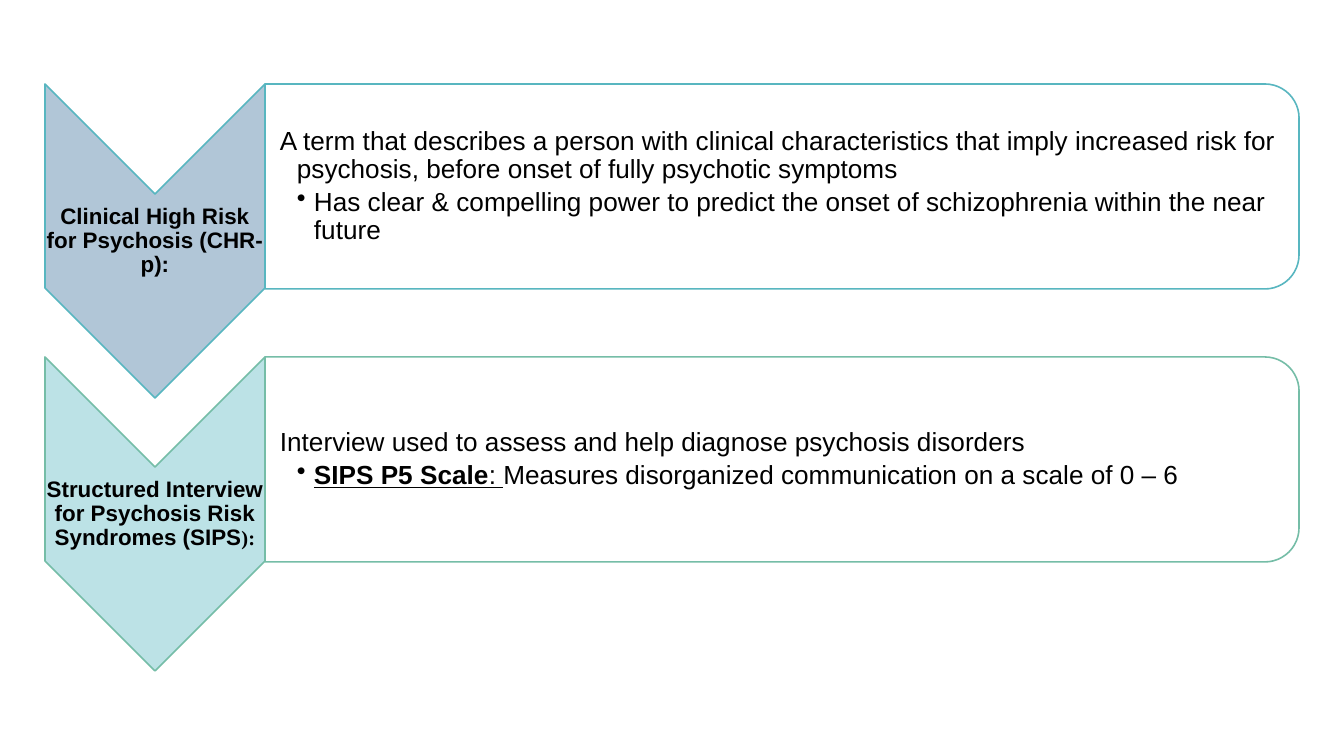
import lxml.etree
import pptx
import pptx.dml.color
import pptx.enum.shapes
import pptx.enum.text
import pptx.oxml.ns
import pptx.util

RGB = pptx.dml.color.RGBColor
SHAPE = pptx.enum.shapes.MSO_SHAPE
ALIGN = pptx.enum.text.PP_ALIGN
qn = pptx.oxml.ns.qn

BLACK = RGB(0x00, 0x00, 0x00)
WHITE = RGB(0xFF, 0xFF, 0xFF)
BLUE_GREY = RGB(0xB1, 0xC6, 0xD7)
PALE_TEAL = RGB(0xBC, 0xE2, 0xE6)
TEAL = RGB(0x58, 0xB6, 0xC0)
GREEN = RGB(0x75, 0xBD, 0xA7)

# Content: each run is its text and the font settings that differ
TERMS = [
    {
        "fill": BLUE_GREY,
        "line": TEAL,
        "label": [("Clinical High Risk for Psychosis (CHR-p):", {})],
        "meaning": [("A term that describes a person with clinical characteristics "
                     "that imply increased risk for psychosis, before onset of "
                     "fully psychotic symptoms", {})],
        "detail": [("Has clear & compelling power to predict the onset of "
                    "schizophrenia within the near future", {})],
    },
    {
        "fill": PALE_TEAL,
        "line": GREEN,
        "label": [("Structured Interview for Psychosis Risk Syndromes (SIPS", {}),
                  ("):", {"size": pptx.util.Pt(11), "name": "Times New Roman"})],
        "meaning": [("Interview used to assess and help diagnose psychosis disorders", {})],
        "detail": [("SIPS P5 Scale", {"bold": True, "underline": True}),
                   (": ", {"underline": True}),
                   ("Measures disorganized communication on a scale of 0 – 6", {})],
    },
]

# Layout in px
SLIDE_W, SLIDE_H = 1344, 756
LEFT, TOP, ROW_STEP = 45, 84, 273
CHEVRON_W, CHEVRON_H = 220, 314
PANEL_W, PANEL_H = 1034, 205
LABEL_H = 94
PANEL_INSET = 10
HANG = 16


def px(length):
    return pptx.util.Emu(round(length * 914400 / 134.4))


def add_turned_shape(slide, kind, left, top, width, height, fill, line):
    """Add a shape turned by 90 degrees that covers the given area."""
    shift = (width - height) / 2
    shape = slide.shapes.add_shape(kind, px(left + shift), px(top - shift),
                                   px(height), px(width))
    shape.rotation = 90
    shape.shadow.inherit = False
    shape.fill.solid()
    shape.fill.fore_color.rgb = fill
    shape.line.color.rgb = line
    shape.line.width = pptx.util.Pt(0.85)
    return shape


def add_text_frame(slide, left, top, width, height, inset_left=1):
    frame = slide.shapes.add_textbox(px(left), px(top), px(width), px(height)).text_frame
    frame.word_wrap = True
    frame.vertical_anchor = pptx.enum.text.MSO_ANCHOR.MIDDLE
    frame.margin_left = px(inset_left)
    frame.margin_top = frame.margin_right = frame.margin_bottom = px(1)
    return frame


def fill_paragraph(paragraph, runs, size, after, align=ALIGN.LEFT, bold=False):
    paragraph.alignment = align
    paragraph.line_spacing = 0.9
    paragraph.space_after = pptx.util.Pt(after)
    paragraph.font.name = "Arial"
    paragraph.font.size = pptx.util.Pt(size)
    paragraph.font.bold = bold
    paragraph.font.color.rgb = BLACK
    for text, changes in runs:
        run = paragraph.add_run()
        run.text = text
        for setting, value in changes.items():
            setattr(run.font, setting, value)


def set_indent(paragraph, level, bullet=None):
    paragraph.level = level
    properties = paragraph._p.get_or_add_pPr()
    properties.set("marL", str(px(HANG * level + level)))
    properties.set("indent", str(-px(HANG + 1)))
    mark = lxml.etree.Element(qn("a:buChar" if bullet else "a:buNone"))
    if bullet:
        mark.set("char", bullet)
    # The bullet comes before the default run properties
    properties.find(qn("a:defRPr")).addprevious(mark)


presentation = pptx.Presentation()
presentation.slide_width, presentation.slide_height = px(SLIDE_W), px(SLIDE_H)
slide = presentation.slides.add_slide(presentation.slide_layouts[6])

for row, term in enumerate(TERMS):
    top = TOP + row * ROW_STEP
    panel_left = LEFT + CHEVRON_W

    # Chevron with the term
    add_turned_shape(slide, SHAPE.CHEVRON, LEFT, top, CHEVRON_W, CHEVRON_H,
                     term["fill"], term["line"])
    label = add_text_frame(slide, LEFT, top + CHEVRON_W / 2, CHEVRON_W, LABEL_H)
    fill_paragraph(label.paragraphs[0], term["label"], 12, 4.8, ALIGN.CENTER, True)

    # Panel with rounded right corners
    panel = add_turned_shape(slide, SHAPE.ROUND_2_SAME_RECTANGLE, panel_left, top,
                             PANEL_W, PANEL_H, WHITE, term["line"])
    color = panel.fill._xPr.find(qn("a:solidFill"))[0]
    lxml.etree.SubElement(color, qn("a:alpha")).set("val", "90000")

    # Meaning and bulleted detail
    body = add_text_frame(slide, panel_left, top + PANEL_INSET, PANEL_W - PANEL_INSET,
                          PANEL_H - 2 * PANEL_INSET, inset_left=15)
    meaning, detail = body.paragraphs[0], body.add_paragraph()
    fill_paragraph(meaning, term["meaning"], 14, 2.5)
    set_indent(meaning, 1)
    fill_paragraph(detail, term["detail"], 14, 2.5)
    set_indent(detail, 2, "•")

presentation.save("out.pptx")
